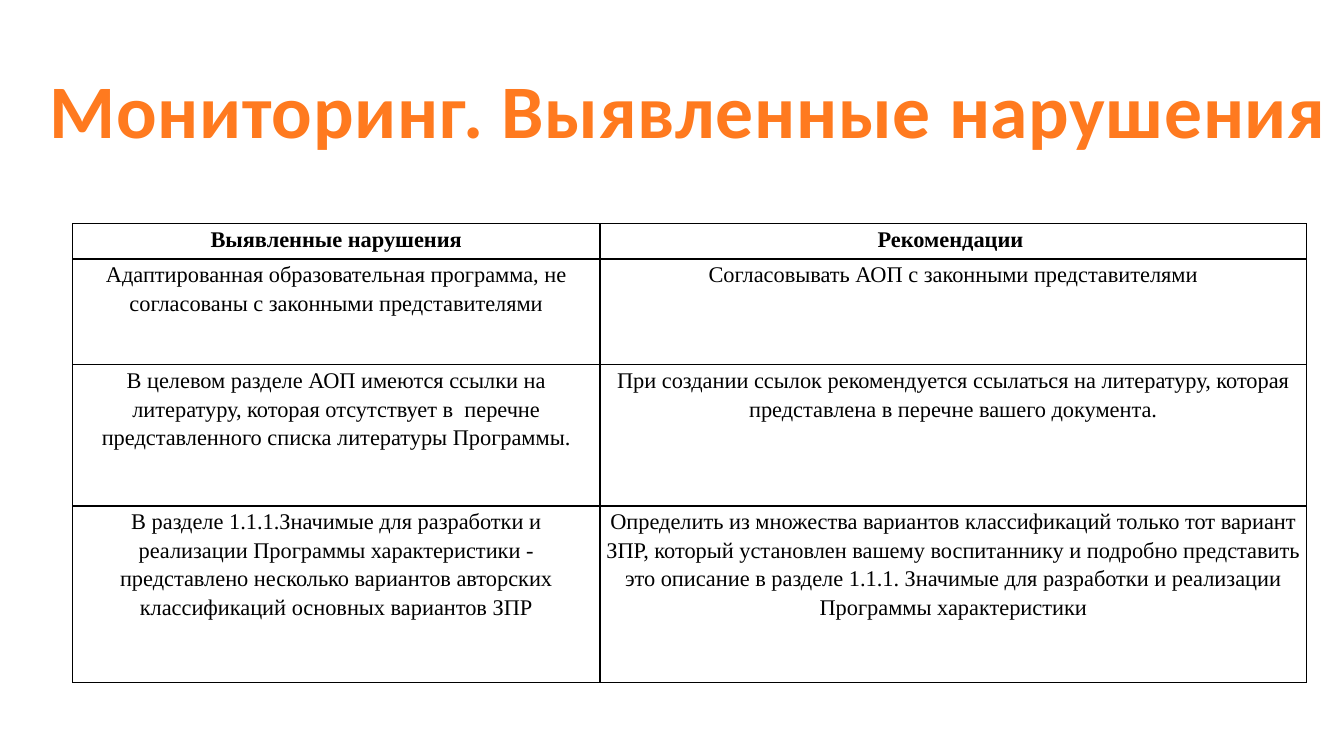
from lxml import etree
from pptx import Presentation
from pptx.dml.color import RGBColor
from pptx.enum.text import MSO_AUTO_SIZE, PP_ALIGN
from pptx.oxml.ns import qn
from pptx.util import Inches, Pt

CENTER = PP_ALIGN.CENTER
GROW = MSO_AUTO_SIZE.SHAPE_TO_FIT_TEXT
COLORS = {"title": "FF7A1F", "text": "000000", "border": "000000", "cell": "FFFFFF"}
TITLE_FONT = "Calibri"
TABLE_FONT = "Times New Roman"
COLUMN_WIDTHS = [5.23, 7.01]
ROW_HEIGHTS = [0.35, 1.05, 1.4, 1.75]
FINDINGS = [
    ("Выявленные нарушения", "Рекомендации "),
    (
        "Адаптированная образовательная программа, не согласованы с законными представителями",
        "Согласовывать АОП с законными представителями",
    ),
    (
        "В целевом разделе АОП имеются ссылки на литературу, которая отсутствует в  перечне "
        "представленного списка литературы Программы.",
        "При создании ссылок рекомендуется ссылаться на литературу, которая представлена "
        "в перечне вашего документа.",
    ),
    (
        "В разделе 1.1.1.Значимые для разработки и реализации Программы характеристики - "
        "представлено несколько вариантов авторских классификаций основных вариантов ЗПР",
        "Определить из множества вариантов классификаций только тот вариант ЗПР, который "
        "установлен вашему воспитаннику и подробно представить это описание в разделе 1.1.1. "
        "Значимые для разработки и реализации Программы характеристики",
    ),
]


class SlideBuilder:
    """Holds the style and the current page and adds elements to it."""

    def __init__(self, page):
        self.page = page

    def style(self, para, font, size, color, bold):
        para.alignment = CENTER
        for span in para.runs:
            span.font.name = font
            span.font.size = Pt(size)
            span.font.bold = bold
            span.font.color.rgb = RGBColor.from_string(COLORS[color])

    def title(self, text, left, top, width, height):
        box = self.page.shapes.add_textbox(
            Inches(left), Inches(top), Inches(width), Inches(height)
        )
        frame = box.text_frame
        frame.word_wrap = False
        frame.auto_size = GROW
        frame.text = text
        para = frame.paragraphs[0]
        self.style(para, TITLE_FONT, 54, "title", True)
        para.runs[0]._r.get_or_add_rPr().set("spc", "50")

    def borders(self, cell):
        properties = cell._tc.get_or_add_tcPr()
        for position, side in enumerate(("a:lnL", "a:lnR", "a:lnT", "a:lnB")):
            line = etree.Element(qn(side), w=str(Pt(1)))
            fill = etree.SubElement(line, qn("a:solidFill"))
            etree.SubElement(fill, qn("a:srgbClr"), val=COLORS["border"])
            properties.insert(position, line)

    def cell(self, cell, text, bold):
        cell.margin_left = cell.margin_right = Inches(0.04)
        cell.margin_top = cell.margin_bottom = 0
        cell.fill.solid()
        cell.fill.fore_color.rgb = RGBColor.from_string(COLORS["cell"])
        cell.text_frame.text = text
        para = cell.text_frame.paragraphs[0]
        para.line_spacing = 1.15
        self.style(para, TABLE_FONT, 16, "text", bold)
        self.borders(cell)

    def table(self, rows, left, top, widths, heights):
        table = self.page.shapes.add_table(
            len(heights), len(widths), Inches(left), Inches(top),
            Inches(sum(widths)), Inches(sum(heights)),
        ).table
        for column, width in zip(table.columns, widths):
            column.width = Inches(width)
        for row, height in zip(table.rows, heights):
            row.height = Inches(height)
        for row_index, texts in enumerate(rows):
            for column_index, text in enumerate(texts):
                self.cell(table.cell(row_index, column_index), text, row_index == 0)


def main():
    deck = Presentation()
    deck.slide_width = Inches(13.33)
    deck.slide_height = Inches(7.5)
    builder = SlideBuilder(deck.slides.add_slide(deck.slide_layouts[6]))
    builder.table(FINDINGS, 0.72, 2.22, COLUMN_WIDTHS, ROW_HEIGHTS)
    builder.title("Мониторинг. Выявленные нарушения", 0.33, 0.57, 13, 1.01)
    deck.save("out.pptx")


if __name__ == "__main__":
    main()
